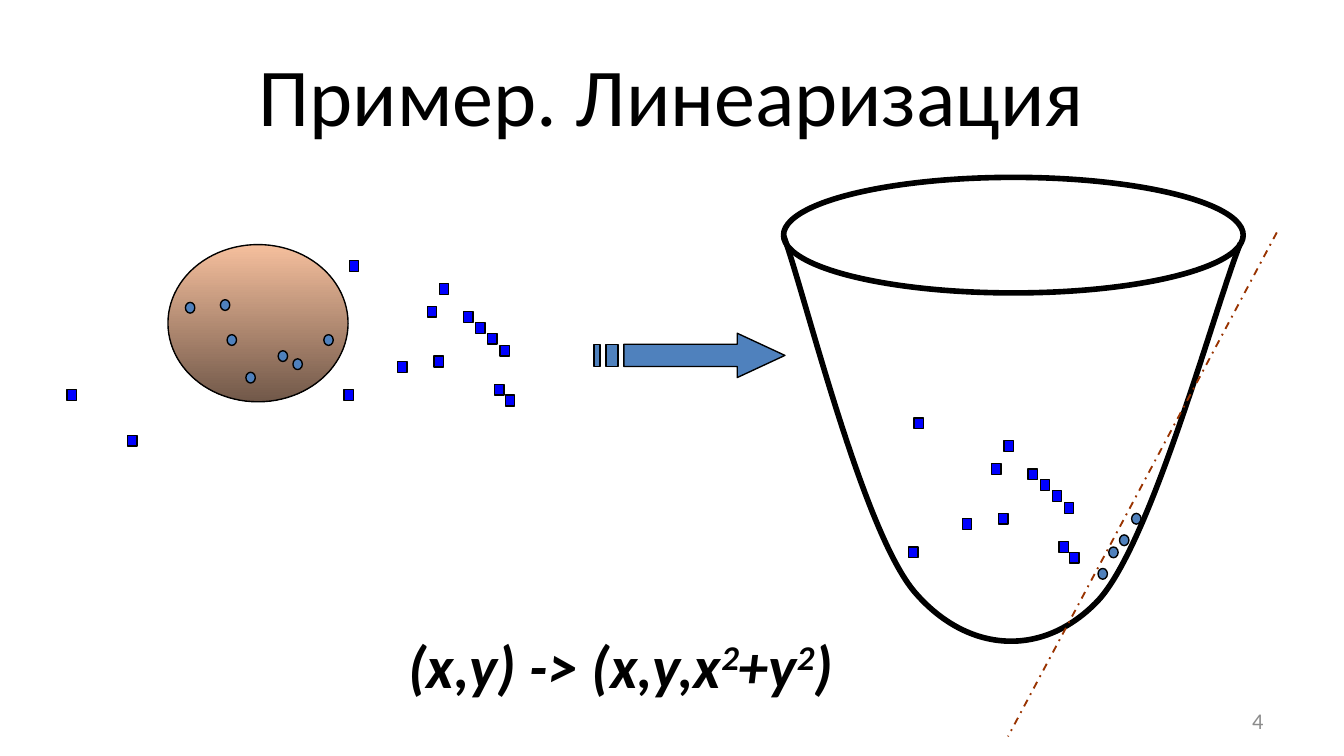
from dataclasses import dataclass

from lxml import etree
from pptx import Presentation
from pptx import util as u
from pptx.dml.color import RGBColor
from pptx.enum import dml, shapes, text
from pptx.oxml.ns import qn

# The grid has 100 columns and 56.25 rows (16:9); its cells are square.
CELL = u.Inches(0.1)
COLUMNS, ROWS = 100, 56.25
MARKER = (0.7, 0.8)


@dataclass(frozen=True)
class Theme:
    font: str = "Calibri"
    ink: str = "000000"
    muted: str = "8C8C8C"
    inner: str = "4F81BD"
    outer: str = "0000FF"
    plane: str = "993300"
    disc_top: str = "F5BF9D"
    disc_bottom: str = "715849"
    title_size: int = 44
    formula_size: int = 32
    number_size: int = 12
    thin: float = 0.75
    medium: float = 1
    thick: float = 3


THEME = Theme()

# Outer points: the first twelve also appear inside the paraboloid.
SHARED_POINTS = [
    (26, 19.4), (29.6, 26.9), (34.5, 23.2), (32.3, 26.5), (32.7, 21.1), (25.6, 29),
    (31.8, 22.8), (36.8, 28.6), (37.6, 29.4), (35.4, 24), (36.3, 24.8), (37.2, 25.7),
]
FAR_POINTS = [(9.5, 32.4), (5, 29)]
LIFT = (42, 11.7)
DISC_POINTS = [
    (24.1, 24.9), (16.9, 24.9), (20.7, 26.1), (13.8, 22.5),
    (18.3, 27.7), (16.4, 22.3), (21.8, 26.7),
]
WALL_POINTS = [(81.7, 42.3), (83.3, 39.8), (82.5, 40.7), (84.2, 38.2)]
BOWL_CURVE = [
    (58.3, 17.5), (59.9, 21.9), (64.2, 39.6), (68.1, 44.1), (72, 48.6),
    (77.6, 49), (81.7, 44.7), (85.7, 40.4), (90.5, 22.5), (92.3, 18.1),
]


def cells(*values):
    return [round(value * CELL) for value in values]


def color(value):
    return RGBColor.from_string(value)


def style_font(font, size, ink, bold=None, italic=None):
    font.name, font.size = THEME.font, u.Pt(size)
    font.color.rgb = color(ink)
    font.bold, font.italic = bold, italic


def style_line(line, width, ink=THEME.ink):
    line.color.rgb = color(ink)
    line.width = u.Pt(width)


def style_shape(shape, fill=None, width=THEME.thin):
    shape.shadow.inherit = False
    style_line(shape.line, width)
    if fill:
        shape.fill.solid()
        shape.fill.fore_color.rgb = color(fill)
    else:
        shape.fill.background()
    return shape


def add_ellipse(parent, box, fill=None, width=THEME.thin):
    ellipse = parent.shapes.add_shape(shapes.MSO_SHAPE.OVAL, *cells(*box))
    return style_shape(ellipse, fill, width)


def add_dots(parent, points):
    for point in points:
        add_ellipse(parent, (*point, *MARKER), THEME.inner)


def add_squares(parent, points, shift=(0, 0)):
    for column, row in points:
        box = cells(column + shift[0], row + shift[1], *MARKER)
        square = parent.shapes.add_shape(shapes.MSO_SHAPE.RECTANGLE, *box)
        style_shape(square, THEME.outer)


def add_disc(slide):
    disc = add_ellipse(slide, (12.5, 18.2, 13.4, 11.7))
    disc.fill.gradient()
    disc.fill.gradient_angle = 270
    for stop, shade in zip(disc.fill.gradient_stops, (THEME.disc_top, THEME.disc_bottom)):
        stop.color.rgb = color(shade)


def add_curve(parent, points):
    """Draw a Bezier curve: a start, then two controls and an end per segment."""
    builder = parent.shapes.build_freeform(*cells(*points[0]))
    builder.add_line_segments([cells(*point) for point in points[1:]], close=False)
    curve = style_shape(builder.convert_to_shape(), width=THEME.thick)
    segments = list(curve.element.iter(qn("a:lnTo")))
    for first in range(0, len(segments), 3):
        bezier = etree.Element(qn("a:cubicBezTo"))
        segments[first].addprevious(bezier)
        for segment in segments[first:first + 3]:
            bezier.append(segment[0])
            segment.getparent().remove(segment)


def add_plane(parent, start, end):
    plane = parent.shapes.add_connector(
        shapes.MSO_CONNECTOR.STRAIGHT, *cells(*start, *end))
    style_line(plane.line, THEME.medium, THEME.plane)
    plane.line.dash_style = dml.MSO_LINE.DASH_DOT
    etree.SubElement(plane.element.spPr, qn("a:effectLst"))


def add_striped_arrow(slide, left, top, width, height):
    """Draw an arrow with two tail stripes, placed in 32nds of its width."""
    def spot(part, share):
        return cells(left + width * part / 32, top + height * share)

    outlines = [
        [(24, 0), (24, 0.25), (5, 0.25), (5, 0.75), (24, 0.75), (24, 1), (32, 0.5)],
        *([(a, 0.25), (a, 0.75), (b, 0.75), (b, 0.25)] for a, b in ((2, 4), (0, 1))),
    ]
    builder = slide.shapes.build_freeform(*spot(*outlines[0][0]))
    for index, outline in enumerate(outlines):
        if index:
            builder.move_to(*spot(*outline[0]))
        builder.add_line_segments([spot(*point) for point in outline[1:]], close=True)
    style_shape(builder.convert_to_shape(), THEME.inner)


def add_title(slide, wording):
    title = slide.shapes.title
    title.left, title.top, title.width, title.height = cells(5, 2.3, 90, 9.4)
    title.text_frame.text = wording
    title.text_frame.vertical_anchor = text.MSO_ANCHOR.MIDDLE
    paragraph = title.text_frame.paragraphs[0]
    paragraph.alignment = text.PP_ALIGN.CENTER
    style_font(paragraph.font, THEME.title_size, THEME.ink)


def add_slide_number(slide, number):
    frame = slide.shapes.add_textbox(*cells(71.7, 52.1, 23.3, 3)).text_frame
    frame.word_wrap = True
    frame.vertical_anchor = text.MSO_ANCHOR.MIDDLE
    frame.text = number
    paragraph = frame.paragraphs[0]
    paragraph.alignment = text.PP_ALIGN.RIGHT
    style_font(paragraph.font, THEME.number_size, THEME.muted)


def add_formula(slide, pieces):
    """Write the pieces in turn as normal text and superscript."""
    frame = slide.shapes.add_textbox(*cells(29.4, 46.3, 35.5, 6.3)).text_frame
    frame.word_wrap = False
    frame.auto_size = text.MSO_AUTO_SIZE.SHAPE_TO_FIT_TEXT
    for index, piece in enumerate(pieces):
        run = frame.paragraphs[0].add_run()
        run.text = piece
        style_font(run.font, THEME.formula_size, THEME.ink, bold=True, italic=True)
        if index % 2:
            run._r.get_or_add_rPr().set("baseline", "30000")


def add_paraboloid(slide):
    group = slide.shapes.add_group_shape()
    add_dots(group, WALL_POINTS)
    add_curve(group, BOWL_CURVE)
    add_ellipse(group, (58.3, 13.2, 34.2, 8.6), width=THEME.thick)
    add_plane(group, (95, 17.3), (75, 54.8))
    add_squares(group, SHARED_POINTS, LIFT)


def main():
    presentation = Presentation()
    presentation.slide_width, presentation.slide_height = cells(COLUMNS, ROWS)
    slide = presentation.slides.add_slide(presentation.slide_layouts[5])
    add_title(slide, "Пример. Линеаризация")
    add_slide_number(slide, "4")
    add_disc(slide)
    add_squares(slide, SHARED_POINTS + FAR_POINTS)
    add_dots(slide.shapes.add_group_shape(), DISC_POINTS)
    add_paraboloid(slide)
    add_striped_arrow(slide, 44.2, 24.8, 14.2, 3.3)
    add_formula(slide, ["(x,y) -> (x,y,x", "2", "+y", "2", ")"])
    presentation.save("out.pptx")


if __name__ == "__main__":
    main()
